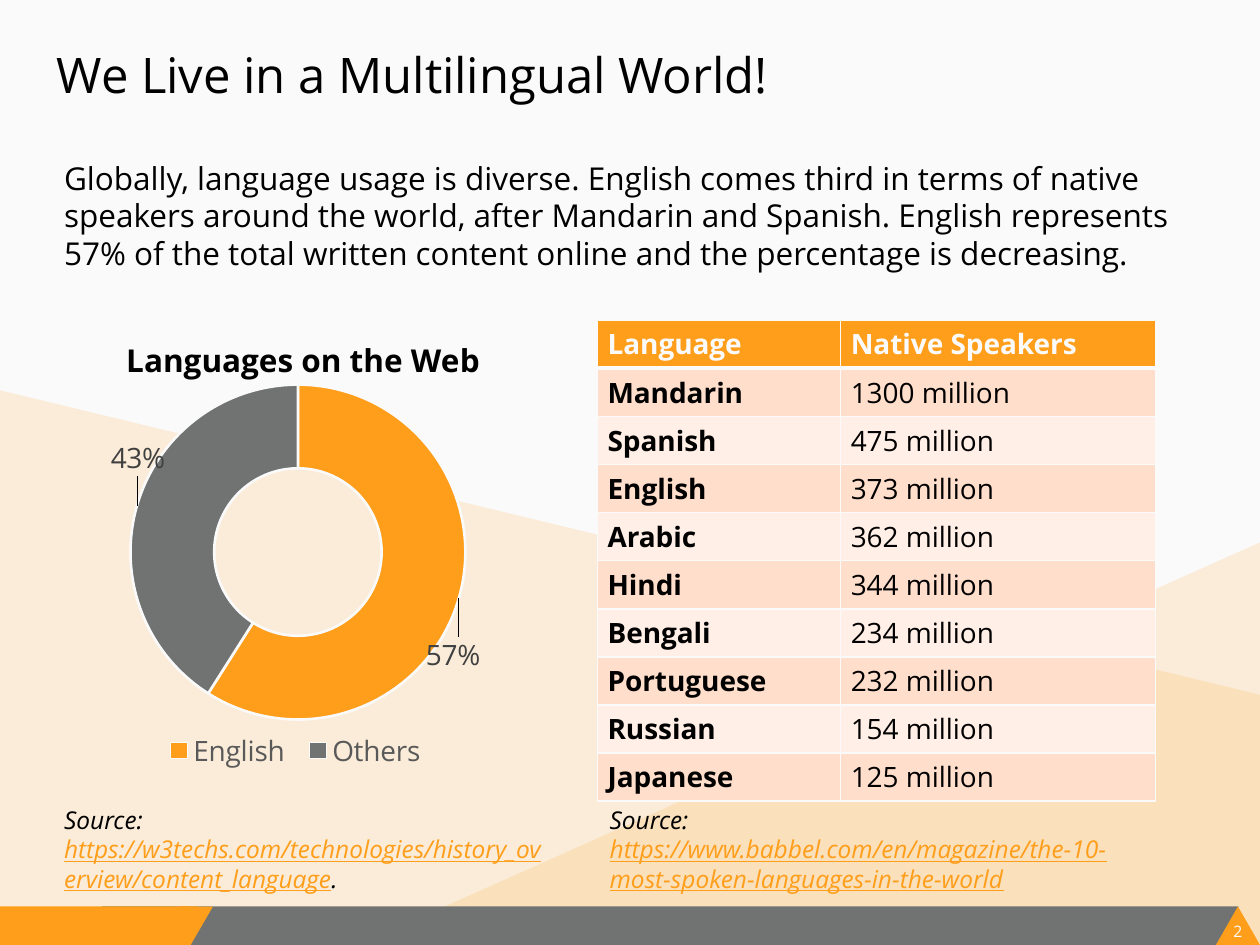
from dataclasses import dataclass
from typing import NamedTuple

from lxml.etree import SubElement
from pptx import Presentation
from pptx.chart.data import CategoryChartData
from pptx.dml.color import RGBColor
from pptx.enum.chart import XL_CHART_TYPE, XL_LEGEND_POSITION
from pptx.enum.shapes import MSO_SHAPE
from pptx.enum.text import MSO_ANCHOR, MSO_AUTO_SIZE, PP_ALIGN
from pptx.oxml import parse_xml
from pptx.oxml.ns import nsdecls, qn
from pptx.util import Pt


@dataclass(frozen=True)
class Theme:
    font: str = "Open Sans"
    paper: str = "FAFAFA"
    ink: str = "000000"
    orange: str = "FF9E1B"
    grey: str = "707372"
    legend: str = "595959"
    label: str = "404040"
    bands: tuple = ("FFDECB", "FFEFE7")
    title: float = 28
    body: float = 18
    table: float = 16
    source: float = 14
    number: float = 9


class Box(NamedTuple):
    left: float
    top: float
    width: float
    height: float

    def lengths(self) -> list:
        return [Pt(value) for value in self]


class Block(NamedTuple):
    kind: MSO_SHAPE
    box: Box
    color: str
    rotation: float = 0
    adjustment: float | None = None


class Source(NamedTuple):
    box: Box
    link: str
    ending: str


class Slice(NamedTuple):
    name: str
    value: float
    label: str
    color: str
    offset: tuple


THEME = Theme()
FOOTER_TOP = 518
FOOTER_HEIGHT = 22
BACKDROPS = [
    [(0, 223.2), (720, 396.7), (720, 538.6), (0, 540)],
    [(720, 309.6), (720, 540), (205.2, 540)],
]
BLOCKS = [
    Block(MSO_SHAPE.RECTANGLE, Box(58.3, FOOTER_TOP, 649.4, FOOTER_HEIGHT), THEME.grey),
    Block(MSO_SHAPE.RECTANGLE, Box(0, FOOTER_TOP, 108, FOOTER_HEIGHT), THEME.orange),
    Block(MSO_SHAPE.ISOSCELES_TRIANGLE, Box(694.8, FOOTER_TOP, 25.2, FOOTER_HEIGHT), THEME.orange),
    Block(MSO_SHAPE.PARALLELOGRAM, Box(96.5, FOOTER_TOP, 25.2, FOOTER_HEIGHT), THEME.orange, 180, 0.58),
    Block(MSO_SHAPE.RECTANGLE, Box(103, FOOTER_TOP, 10, 9.4), THEME.orange),
]
INTRO = (
    "Globally, language usage is diverse. English comes third in terms of native "
    "speakers around the world, after Mandarin and Spanish. English represents 57% "
    "of the total written content online and the percentage is decreasing."
)
SPEAKERS = {
    "Mandarin": 1300, "Spanish": 475, "English": 373, "Arabic": 362, "Hindi": 344,
    "Bengali": 234, "Portuguese": 232, "Russian": 154, "Japanese": 125,
}
SOURCES = [
    Source(Box(341.3, 456.5, 319, 58.3),
           "https://www.babbel.com/en/magazine/the-10-most-spoken-languages-in-the-world", ""),
    Source(Box(29.5, 456.5, 293.8, 58.3),
           "https://w3techs.com/technologies/history_overview/content_language", "."),
]
SLICES = [
    Slice("English", 59, "57%", THEME.orange, (0.07, 0.15)),
    Slice("Others", 41, "43%", THEME.grey, (-0.08, -0.13)),
]


def style(font, size: float, color: str, bold: bool = False) -> None:
    font.name = THEME.font
    font.size = Pt(size)
    font.bold = bold
    font.color.rgb = RGBColor.from_string(color)


def paint(shape, color: str) -> None:
    shape.shadow.inherit = False
    shape.fill.solid()
    shape.fill.fore_color.rgb = RGBColor.from_string(color)
    shape.line.fill.background()


def add_backdrop(page, points: list) -> None:
    builder = page.shapes.build_freeform(*points[0], scale=Pt(1))
    builder.add_line_segments(points[1:], close=True)
    shape = builder.convert_to_shape()
    paint(shape, THEME.orange)
    color = shape.element.spPr.find(qn("a:solidFill"))[0]
    SubElement(color, qn("a:alpha"), val="15000")


def add_block(page, block: Block) -> None:
    shape = page.shapes.add_shape(block.kind, *block.box.lengths())
    paint(shape, block.color)
    shape.rotation = block.rotation
    if block.adjustment is not None:
        shape.adjustments[0] = block.adjustment


def add_text(page, box: Box, text: str, size: float, color: str):
    frame = page.shapes.add_textbox(*box.lengths()).text_frame
    frame.word_wrap = True
    para = frame.paragraphs[0]
    para.text = text
    style(para.font, size, color)
    return frame


def add_source(page, source: Source) -> None:
    para = add_text(page, source.box, "Source: ", THEME.source, THEME.ink).paragraphs[0]
    para.font.italic = True
    span = para.add_run()
    span.text = source.link
    span.font.underline = True
    span.font.color.rgb = RGBColor.from_string(THEME.orange)
    if source.ending:
        para.add_run().text = source.ending


def add_border(cell, side: str, width: float, position: int) -> None:
    cell._tc.get_or_add_tcPr().insert(position, parse_xml(
        f'<a:{side} {nsdecls("a")} w="{Pt(width)}"><a:solidFill>'
        f'<a:srgbClr val="{THEME.paper}"/></a:solidFill></a:{side}>'))


def add_speakers(page) -> None:
    rows = [("Language", "Native Speakers")]
    rows += [(name, f"{count} million") for name, count in SPEAKERS.items()]
    row_height = 27.5
    box = Box(341.3, 182.9, 319, row_height * len(rows))
    table = page.shapes.add_table(len(rows), 2, *box.lengths()).table
    for column, width in zip(table.columns, (139, 180)):
        column.width = Pt(width)
    for row_index, values in enumerate(rows):
        table.rows[row_index].height = Pt(row_height)
        header = row_index == 0
        for column_index, value in enumerate(values):
            cell = table.cell(row_index, column_index)
            cell.text = value
            cell.vertical_anchor = MSO_ANCHOR.MIDDLE
            cell.margin_left = cell.margin_right = Pt(5.9)
            cell.margin_top = cell.margin_bottom = Pt(2.9)
            cell.fill.solid()
            fill = THEME.orange if header else THEME.bands[(row_index - 1) % 2]
            cell.fill.fore_color.rgb = RGBColor.from_string(fill)
            style(cell.text_frame.paragraphs[0].font, THEME.table,
                  THEME.paper if header else THEME.ink, header or column_index == 0)
            widths = {"lnL": 1, "lnR": 1, "lnT": 3 if row_index == 1 else 1, "lnB": 3 if header else 1}
            for position, (side, width) in enumerate(widths.items()):
                add_border(cell, side, width, position)


def set_layout(parent, position: int, **values) -> None:
    for old in parent.findall(qn("c:layout")):
        parent.remove(old)
    items = "".join(f'<c:{name} val="{value}"/>' for name, value in values.items())
    parent.insert(position, parse_xml(
        f'<c:layout {nsdecls("c")}><c:manualLayout>{items}</c:manualLayout></c:layout>'))


def add_web_chart(page) -> None:
    data = CategoryChartData()
    data.categories = [part.name for part in SLICES]
    data.add_series("Series 1", [part.value for part in SLICES])
    box = Box(29.5, 187.9, 281.5, 257.8)
    chart = page.shapes.add_chart(XL_CHART_TYPE.DOUGHNUT, *box.lengths(), data).chart
    style(chart.font, THEME.table, THEME.label)
    chart.has_title = True
    para = chart.chart_title.text_frame.paragraphs[0]
    para.text = "Languages on the Web"
    style(para.font, THEME.body, THEME.ink, True)
    chart.has_legend = True
    chart.legend.position = XL_LEGEND_POSITION.BOTTOM
    chart.legend.include_in_layout = False
    style(chart.legend.font, THEME.table, THEME.legend)

    plot = chart.plots[0]
    plot.vary_by_categories = True
    for index, part in enumerate(SLICES):
        point = plot.series[0].points[index]
        point.format.fill.solid()
        point.format.fill.fore_color.rgb = RGBColor.from_string(part.color)
        point.format.line.color.rgb = RGBColor.from_string(THEME.paper)
        point.format.line.width = Pt(1.5)
        para = point.data_label.text_frame.paragraphs[0]
        para.text = part.label
        style(para.font, THEME.table, THEME.label)
    root = chart.element
    for label, part in zip(root.iter(qn("c:dLbl")), SLICES):
        set_layout(label, 1, x=part.offset[0], y=part.offset[1])
    edges = {"xMode": "edge", "yMode": "edge"}
    set_layout(next(root.iter(qn("c:title"))), 1, **edges, x=0.14, y=0)
    set_layout(next(root.iter(qn("c:plotArea"))), 0, layoutTarget="inner",
               **edges, x=0.16, y=0.11, w=0.68, h=0.77)
    set_layout(next(root.iter(qn("c:legend"))), 1, **edges, x=0.21, y=0.89, w=0.57, h=0.09)
    next(root.iter(qn("c:holeSize"))).set("val", "75")


def add_title(page) -> None:
    title = page.shapes.title
    title.left, title.top, title.width, title.height = Box(25.2, 21.6, 664.6, 90).lengths()
    frame = title.text_frame
    frame.text = "We Live in a Multilingual World!"
    frame.vertical_anchor = MSO_ANCHOR.TOP
    frame.auto_size = MSO_AUTO_SIZE.NONE
    para = frame.paragraphs[0]
    para.alignment = PP_ALIGN.LEFT
    style(para.font, THEME.title, THEME.ink)


def add_page_number(page) -> None:
    frame = add_text(page, Box(701.3, 527, 12.2, 10.8), "2", THEME.number, THEME.paper)
    frame.margin_left = frame.margin_right = frame.margin_top = frame.margin_bottom = 0
    frame.paragraphs[0].alignment = PP_ALIGN.CENTER


def main() -> None:
    deck = Presentation()
    deck.slide_width, deck.slide_height = Pt(720), Pt(540)
    page = deck.slides.add_slide(deck.slide_layouts[5])
    page.background.fill.solid()
    page.background.fill.fore_color.rgb = RGBColor.from_string(THEME.paper)
    for points in BACKDROPS:
        add_backdrop(page, points)
    for block in BLOCKS:
        add_block(page, block)
    add_page_number(page)
    add_title(page)
    add_speakers(page)
    for source in SOURCES:
        add_source(page, source)
    add_web_chart(page)
    add_text(page, Box(29.5, 87.1, 653.8, 72.7), INTRO, THEME.body, THEME.ink)
    deck.save("out.pptx")


if __name__ == "__main__":
    main()
